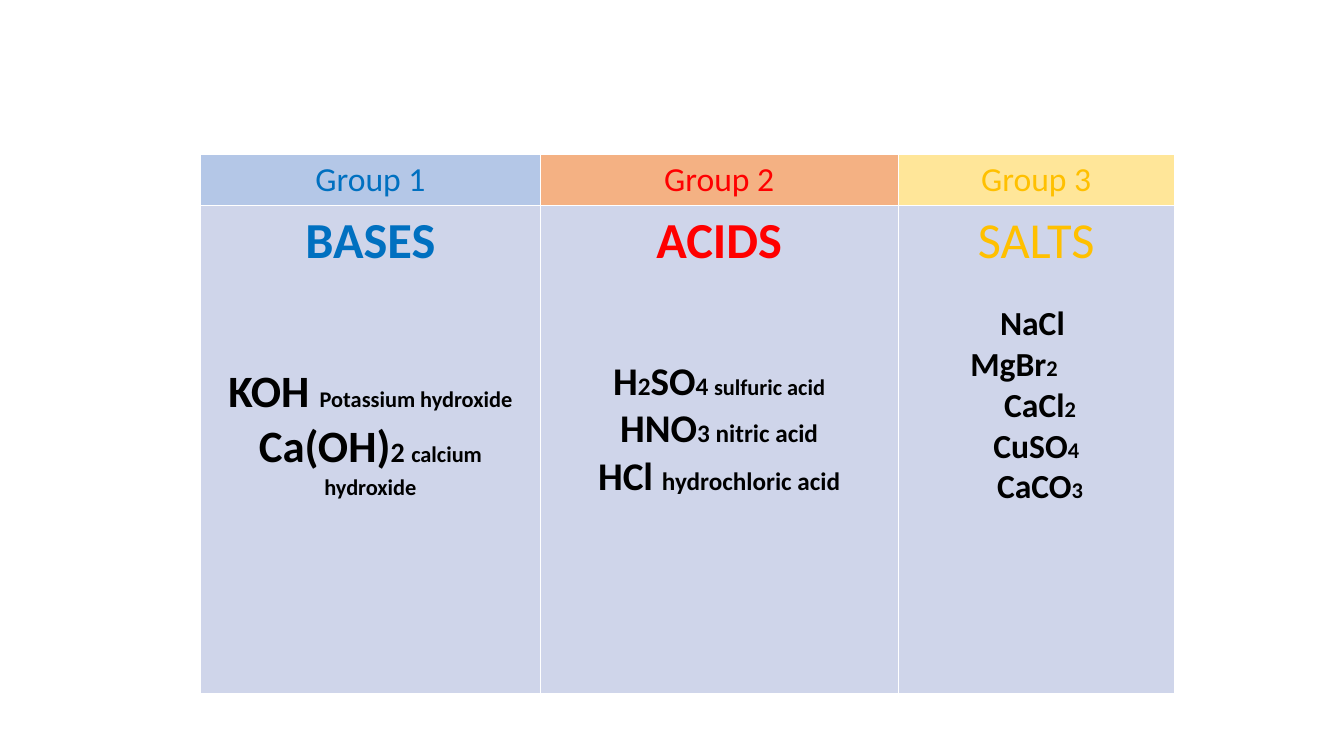
from lxml.etree import SubElement
from pptx import Presentation
from pptx.dml.color import RGBColor
from pptx.enum.text import PP_ALIGN as Align
from pptx.oxml.ns import qn
from pptx.util import Emu, Inches, Pt

COLUMN_WIDTHS = (3.37, 3.55, 2.74)
ROW_HEIGHTS = (0.51, 4.84)
BODY_FILL = "CFD5EA"
BORDER = "FFFFFF"
SALT_SHIFT = 0.44

GROUPS = (
    {
        "name": "Group 1", "fill": "B4C7E7", "color": "0070C0",
        "heading": "BASES", "bold": True, "gap": 66, "shift": 0,
        "formulas": (
            (("KOH ", 32), ("Potassium hydroxide", 16)),
            (("Ca(OH)", 32), ("2 ", 20), ("calcium hydroxide", 16)),
        ),
    },
    {
        "name": "Group 2", "fill": "F4B183", "color": "FF0000",
        "heading": "ACIDS", "bold": True, "gap": 61, "shift": 0,
        "formulas": (
            (("H", 28), ("2", 18), ("SO", 28), ("4 ", 18), ("sulfuric acid", 16)),
            (("HNO", 28), ("3 nitric acid", 18)),
            (("HCl ", 28), ("hydrochloric acid", 18)),
        ),
    },
    {
        "name": "Group 3", "fill": "FFE699", "color": "FFC000",
        "heading": "SALTS", "bold": False, "gap": 22, "shift": SALT_SHIFT,
        "formulas": (
            (("NaCl ", 24),),
            (("MgBr", 24), ("2", 16)),
            ((" CaCl", 24), ("2", 16)),
            (("CuSO", 24), ("4", 16)),
            ((" CaCO", 24), ("3", 16)),
        ),
    },
)


def rgb(value):
    return RGBColor.from_string(value)


def style_cell(cell, fill):
    properties = cell._tc.get_or_add_tcPr()
    for side in ("lnL", "lnR", "lnT", "lnB"):
        line = SubElement(properties, qn(f"a:{side}"), w=str(Pt(1)))
        SubElement(SubElement(line, qn("a:solidFill")), qn("a:srgbClr"), val=BORDER)
    cell.fill.solid()
    cell.fill.fore_color.rgb = rgb(fill)


def write_paragraph(paragraph, runs, color, bold, indent=0, gap=0):
    paragraph.alignment = Align.CENTER
    paragraph.space_before = Pt(gap)
    if indent:
        paragraph._p.get_or_add_pPr().set("marL", str(Inches(indent)))
    for text, size in runs:
        run = paragraph.add_run()
        run.text = text
        for name, value in {"name": "Calibri", "size": Pt(size), "bold": bold}.items():
            setattr(run.font, name, value)
        run.font.color.rgb = rgb(color)


def write_header(cell, group):
    style_cell(cell, group["fill"])
    write_paragraph(cell.text_frame.paragraphs[0], [(group["name"], 24)],
                    group["color"], False)


def write_body(cell, group):
    style_cell(cell, BODY_FILL)
    shift = group["shift"]
    cell.margin_right = Inches(0.1 + shift)
    frame = cell.text_frame
    write_paragraph(frame.paragraphs[0], [(group["heading"], 36)],
                    group["color"], group["bold"], shift)
    for index, formula in enumerate(group["formulas"]):
        indent = 0 if formula[0][0] == "MgBr" else shift
        gap = group["gap"] if index == 0 else 0
        write_paragraph(frame.add_paragraph(), formula, "000000", True, indent, gap)


def add_group_table(slide):
    table = slide.shapes.add_table(
        len(ROW_HEIGHTS), len(GROUPS), Inches(1.99), Inches(1.53),
        Inches(sum(COLUMN_WIDTHS)), Inches(sum(ROW_HEIGHTS))).table
    table.first_row = table.horz_banding = False
    for column, width in zip(table.columns, COLUMN_WIDTHS):
        column.width = Inches(width)
    for row, height in zip(table.rows, ROW_HEIGHTS):
        row.height = Inches(height)
    for index, group in enumerate(GROUPS):
        write_header(table.cell(0, index), group)
        write_body(table.cell(1, index), group)


def main():
    presentation = Presentation()
    presentation.slide_width = Emu(12192000)
    presentation.slide_height = Inches(7.5)
    slide = presentation.slides.add_slide(presentation.slide_layouts[6])
    add_group_table(slide)
    presentation.save("out.pptx")


if __name__ == "__main__":
    main()
